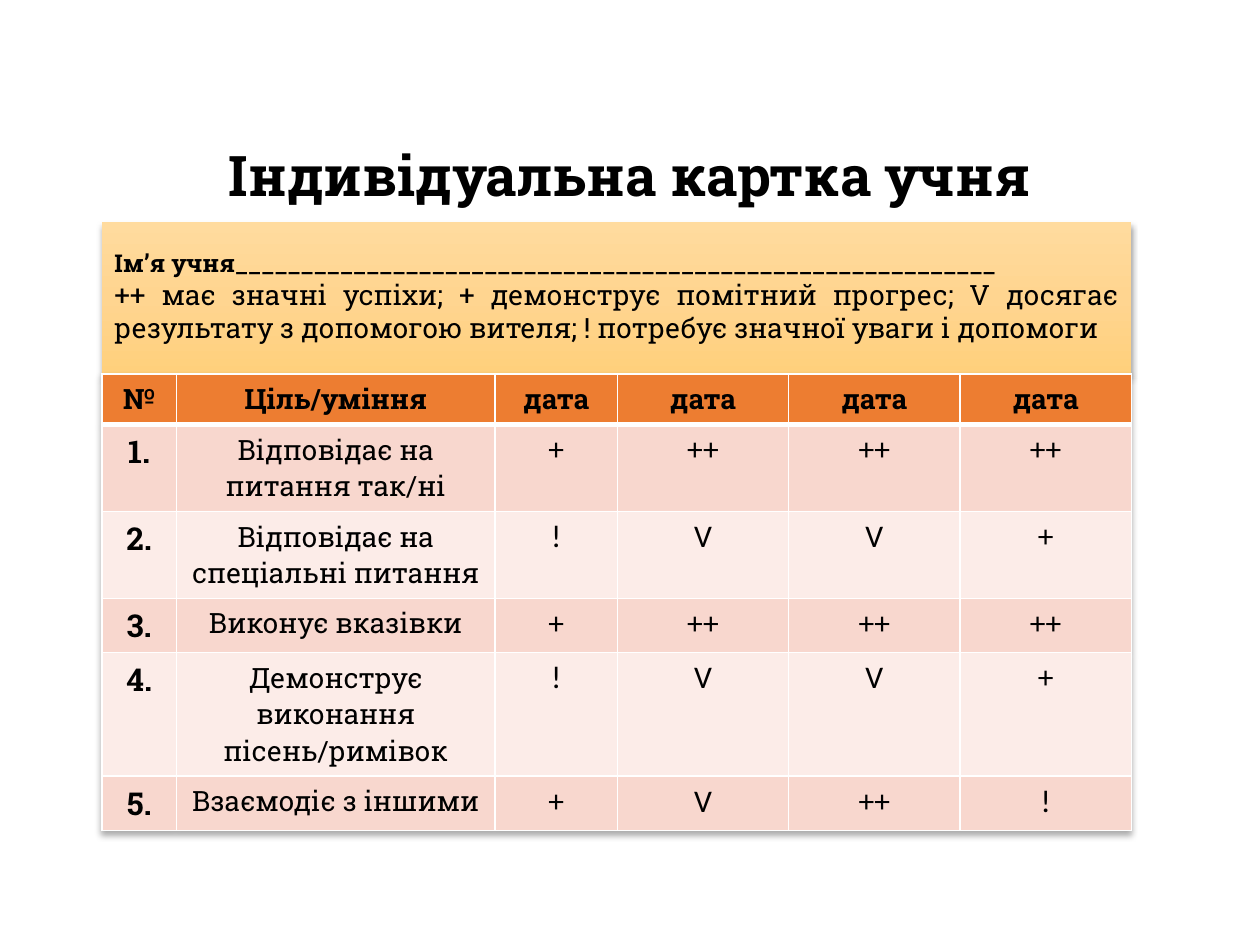
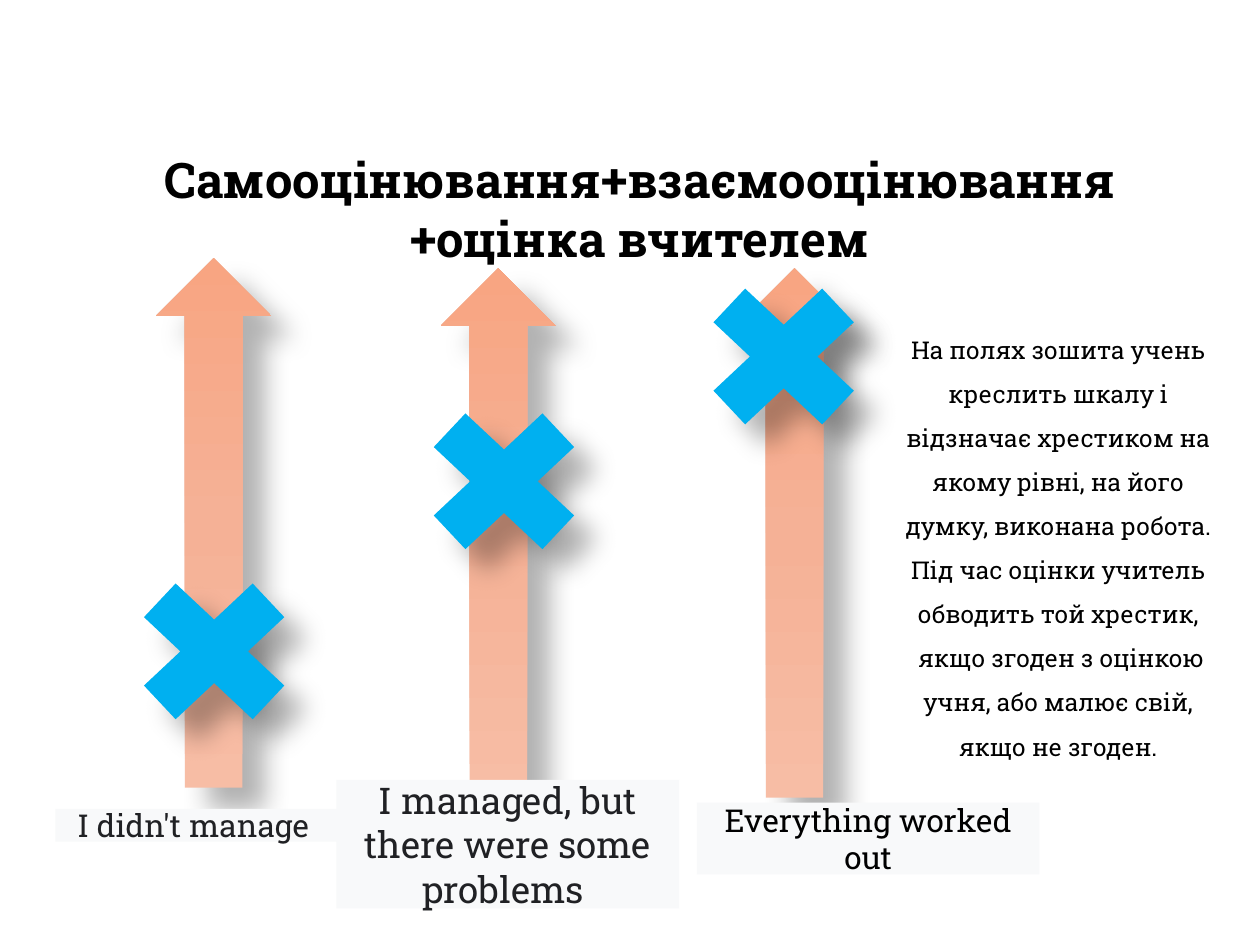
import pptx
import pptx.dml.color
import pptx.enum.shapes
import pptx.enum.text
import pptx.oxml
import pptx.oxml.ns
import pptx.util

Inches, Pt = pptx.util.Inches, pptx.util.Pt
SHAPE = pptx.enum.shapes.MSO_SHAPE
ALIGN = pptx.enum.text.PP_ALIGN
ANCHOR = pptx.enum.text.MSO_ANCHOR
NS = pptx.oxml.ns.nsdecls("a")

# Shared look
SLAB, PLAIN = "Roboto Slab", "Calibri"
BLACK, WHITE, INK = "000000", "FFFFFF", "202124"
HEADER, BANDS = "ED7D31", ("F8D7CE", "FCECE8")
CROSS, LABEL = "00B0F0", "F8F9FA"
AMBER = ("FFDB9E", "FFD590", "FFD07C")
SALMON = ("F7BDA5", "F5B196", "F8A582")
CARD_SHADOW = (32, 3.5, 2.2, 90)    # opacity %, blur, distance, angle
SCALE_SHADOW = (30, 15, 18, 45)


def color(value):
    return pptx.dml.color.RGBColor.from_string(value)


def effects(shadow):
    alpha, blur, dist, angle = shadow
    return pptx.oxml.parse_xml(
        f'<a:effectLst {NS}><a:outerShdw blurRad="{Pt(blur)}" dist="{Pt(dist)}" '
        f'dir="{angle * 60000}" algn="tl" rotWithShape="0"><a:srgbClr val="{BLACK}">'
        f'<a:alpha val="{alpha * 1000}"/></a:srgbClr></a:outerShdw></a:effectLst>')


def gradient(colors):
    stops = "".join(f'<a:gs pos="{pos}"><a:srgbClr val="{c}"/></a:gs>'
                    for pos, c in zip((0, 50000, 100000), colors))
    return pptx.oxml.parse_xml(
        f'<a:gradFill {NS} rotWithShape="1"><a:gsLst>{stops}</a:gsLst>'
        '<a:lin ang="5400000" scaled="0"/></a:gradFill>')


def write(p, text, size, bold=False, font=SLAB, ink=BLACK, align=ALIGN.CENTER, spacing=None):
    p.alignment = align
    if spacing:
        p.line_spacing = spacing
    r = p.add_run()
    r.text = text
    r.font.name, r.font.size, r.font.bold = font, Pt(size), bold
    r.font.color.rgb = color(ink)


def add_text(s, box, lines, anchor=ANCHOR.TOP, wrap=True, **style):
    tf = s.shapes.add_textbox(*map(Inches, box)).text_frame
    tf.word_wrap, tf.vertical_anchor = wrap, anchor
    for i, line in enumerate(lines):
        write(tf.add_paragraph() if i else tf.paragraphs[0], line, **style)


def add_shape(s, kind, box, fill, shadow=None):
    """A borderless shape; a tuple of colours makes a vertical gradient."""
    sp = s.shapes.add_shape(kind, *map(Inches, box))
    sp.shadow.inherit = False
    sp.line.fill.background()
    if isinstance(fill, tuple):
        sp._element.spPr.find(pptx.oxml.ns.qn("a:prstGeom")).addnext(gradient(fill))
    else:
        sp.fill.solid()
        sp.fill.fore_color.rgb = color(fill)
    if shadow:
        plain = sp._element.spPr.find(pptx.oxml.ns.qn("a:effectLst"))
        plain.getparent().replace(plain, effects(shadow))
    return sp


# Slide 1: pupil card
def legend(s, box):
    sp = add_shape(s, SHAPE.RECTANGLE, box, AMBER, CARD_SHADOW)
    tf = sp.text_frame
    tf.word_wrap, tf.vertical_anchor = True, ANCHOR.MIDDLE
    tf.margin_bottom = Inches(0.08)
    write(tf.paragraphs[0], "Ім’я учня" + "_" * 58, 14, True, align=ALIGN.JUSTIFY)
    write(tf.add_paragraph(), "++ має значні успіхи; + демонструє помітний прогрес; V досягає "
          "результату з допомогою вителя; ! потребує значної уваги і допомоги",
          16, align=ALIGN.JUSTIFY)


def style_cell(cell, fill, bottom):
    cell.fill.solid()
    cell.fill.fore_color.rgb = color(fill)
    tc_pr = cell._tc.get_or_add_tcPr()
    for i, (side, width) in enumerate(zip("LRTB", (1, 1, 1, bottom))):
        tc_pr.insert(i, pptx.oxml.parse_xml(
            f'<a:ln{side} {NS} w="{Pt(width)}"><a:solidFill><a:srgbClr val="{WHITE}"/>'
            f'</a:solidFill></a:ln{side}>'))


def skills_table(s, left, top):
    widths = [0.59, 2.53, 0.97] + [1.36] * 3
    heights = [0.4, 0.69, 0.69, 0.43, 0.98, 0.43]
    skills = [("Відповідає на питання так/ні", "+ ++ ++ ++"),
              ("Відповідає на спеціальні питання", "! V V +"),
              ("Виконує вказівки", "+ ++ ++ ++"),
              ("Демонструє виконання пісень/римівок", "! V V +"),
              ("Взаємодіє з іншими", "+ V ++ !")]
    rows = [["№", "Ціль/уміння"] + ["дата"] * 4]
    rows += [[f"{n}.", skill, *marks.split()] for n, (skill, marks) in enumerate(skills, 1)]
    table = s.shapes.add_table(len(rows), len(widths), Inches(left), Inches(top),
                               Inches(sum(widths)), Inches(sum(heights))).table
    table._tbl.tblPr.insert(0, effects(CARD_SHADOW))
    for column, width in zip(table.columns, widths):
        column.width = Inches(width)
    for i, (row, height) in enumerate(zip(rows, heights)):
        table.rows[i].height = Inches(height)
        for j, text in enumerate(row):
            cell = table.cell(i, j)
            style_cell(cell, BANDS[(i - 1) % 2] if i else HEADER, 1 if i else 3)
            p = cell.text_frame.paragraphs[0]
            if i == 0:
                write(p, text, 16, True)
            elif j == 0:
                write(p, text, 18, True)
            elif j == 1:
                write(p, text, 16)
            else:
                write(p, text, 18, font=PLAIN)


def card_slide(prs):
    s = prs.slides.add_slide(prs.slide_layouts[6])
    add_text(s, (0.69, 0.69, 8.62, 1.45), ["Індивідуальна картка учня"],
             ANCHOR.MIDDLE, size=32, bold=True, spacing=0.9)
    legend(s, (0.81, 1.76, 8.17, 1.21))
    skills_table(s, 0.81, 2.97)


# Slide 2: self-assessment scales
def scale(s, left, top, cross_dx, cross_dy):
    arrow = add_shape(s, SHAPE.DOWN_ARROW, (left, top, 0.91, 4.2), SALMON, SCALE_SHADOW)
    arrow.rotation = 180
    add_shape(s, SHAPE.MATH_MULTIPLY, (left + cross_dx, top + cross_dy, 1.66, 1.56),
              CROSS, SCALE_SHADOW)


def scale_label(s, box, text, size, ink):
    tf = add_shape(s, SHAPE.RECTANGLE, box, LABEL).text_frame
    tf.word_wrap, tf.vertical_anchor = True, ANCHOR.MIDDLE
    tf.margin_left = tf.margin_right = Inches(0.05)
    tf.margin_top = tf.margin_bottom = Inches(-0.02)
    write(tf.paragraphs[0], text, size, ink=ink)


def assessment_slide(prs):
    s = prs.slides.add_slide(prs.slide_layouts[6])
    add_text(s, (0.95, 1.14, 8.25, 1.04),
             ["Самооцінювання+взаємооцінювання", "+оцінка вчителем"],
             wrap=False, size=28, bold=True)
    for place in ((1.24, 2.05, -0.37, 2.34), (3.5, 2.13, -0.33, 0.91),
                  (5.85, 2.13, -0.46, -0.08)):
        scale(s, *place)
    add_text(s, (7.05, 2.49, 2.7, 3.64),
             ["На полях зошита учень креслить шкалу і відзначає хрестиком на якому рівні, "
              "на його думку, виконана робота. Під час оцінки учитель обводить той хрестик,",
              " якщо згоден з оцінкою учня, або малює свій, якщо не згоден."],
             size=14, spacing=1.5)
    scale_label(s, (0.44, 6.42, 2.25, 0.26), "I didn't manage ", 18, INK)
    scale_label(s, (2.67, 6.19, 2.72, 1.02), "I managed, but there were some problems ", 21, INK)
    scale_label(s, (5.53, 6.37, 2.72, 0.57), "Everything worked out", 18, BLACK)


def main():
    prs = pptx.Presentation()
    prs.slide_width, prs.slide_height = Inches(10), Inches(7.5)
    card_slide(prs)
    assessment_slide(prs)
    prs.save("out.pptx")


if __name__ == "__main__":
    main()
